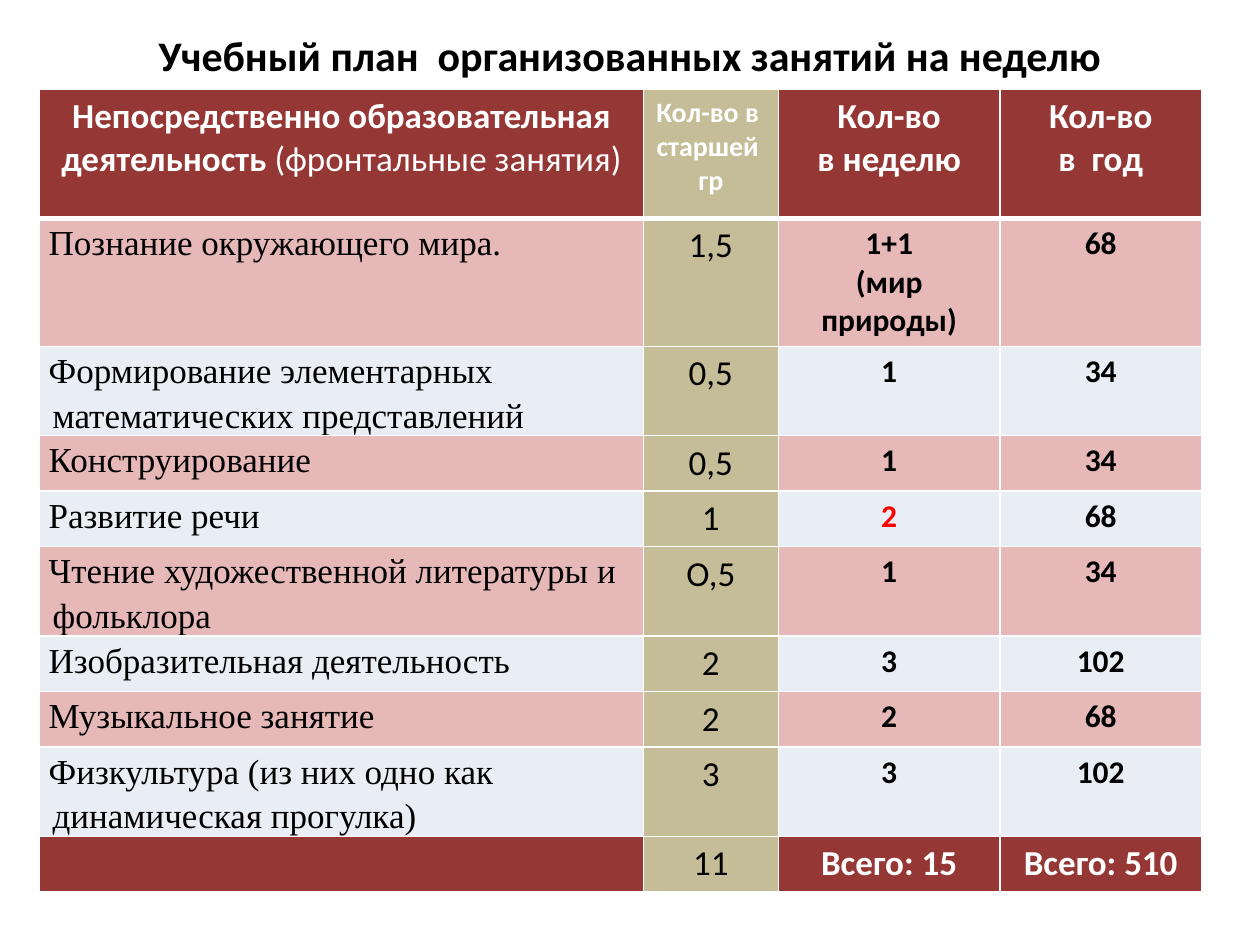
import pptx
import pptx.dml.color
import pptx.enum.text
import pptx.oxml
import pptx.oxml.ns
import pptx.util

Cm = pptx.util.Cm
Pt = pptx.util.Pt
CENTER = pptx.enum.text.PP_ALIGN.CENTER
LEFT = pptx.enum.text.PP_ALIGN.LEFT

TITLE = "Учебный план  организованных занятий на неделю"
HEADER = [
    ["Непосредственно образовательная деятельность |(фронтальные занятия)"],
    ["Кол-во в  старшей ", "гр"],
    ["Кол-во", "в неделю"],
    ["Кол-во", "в  год"],
]
LESSONS = [
    ("Познание окружающего мира.", "1,5", ["1+1", "(мир природы)"], "68"),
    ("Формирование элементарных математических представлений", "0,5", ["1"], "34"),
    ("Конструирование", "0,5", ["1"], "34"),
    ("Развитие речи", "1", ["2"], "68"),
    ("Чтение художественной литературы и фольклора", "О,5", ["1"], "34"),
    ("Изобразительная деятельность", "2", ["3"], "102"),
    ("Музыкальное занятие", "2", ["2"], "68"),
    ("Физкультура (из них одно как динамическая прогулка)", "3", ["3"], "102"),
]
TOTALS = [[], ["11"], ["Всего: 15"], ["Всего: 510"]]

COLUMN_WIDTHS = [12.17, 2.72, 4.47, 4.06]
ROW_HEIGHTS = [2.6, 2.56, 1.8, 1.1, 1.1, 1.8, 1.1, 1.1, 1.8, 1.1]
RED, KHAKI, PINK, PALE = "953735", "C4BD97", "E6B9B8", "E9EDF4"
WHITE, BLACK, ALERT = "FFFFFF", "000000", "FF0000"
ALERT_CELL = (4, 2)

HEADING = {"name": "Calibri", "size": Pt(20), "bold": True}
SMALL_HEADING = {**HEADING, "size": Pt(16)}
LESSON = {"name": "Times New Roman", "size": Pt(20), "bold": False}
GROUP = {**LESSON, "name": "Calibri"}
COUNT = {**HEADING, "size": Pt(18)}
TITLE_FONT = {**HEADING, "size": Pt(24)}


def color(value):
    return pptx.dml.color.RGBColor.from_string(value)


def apply(target, values):
    for name, value in values.items():
        setattr(target, name, value)


def write(frame, lines, font, ink, align=CENTER):
    for index, line in enumerate(lines):
        para = frame.paragraphs[0] if index == 0 else frame.add_paragraph()
        para.alignment = align
        for part, text in enumerate(line.split("|")):
            span = para.add_run()
            span.text = text
            apply(span.font, font)
            span.font.color.rgb = color(ink)
            if part:
                span.font.bold = False


def set_borders(cell, widths):
    properties = cell._tc.get_or_add_tcPr()
    for index, (side, width) in enumerate(widths.items()):
        border = pptx.oxml.parse_xml(
            f'<a:ln{side} {pptx.oxml.ns.nsdecls("a")} w="{Pt(width)}"><a:solidFill>'
            f'<a:srgbClr val="{WHITE}"/></a:solidFill></a:ln{side}>'
        )
        properties.insert(index, border)


def format_lesson(cell):
    apply(cell, {
        "margin_left": Cm(0.18), "margin_right": Cm(0.18),
        "margin_top": 0, "margin_bottom": 0,
    })
    para = cell.text_frame.paragraphs[0]
    para.line_spacing = 1.15
    indents = para._p.get_or_add_pPr()
    indents.set("marL", str(Cm(0.08)))
    indents.set("indent", str(-Cm(0.08)))


def style_for(row, column, last):
    if row == 0:
        return SMALL_HEADING if column == 1 else HEADING
    if column == 1:
        return GROUP
    if row == last:
        return HEADING
    return LESSON if column == 0 else COUNT


def build_table(page):
    rows = [HEADER]
    rows += [[[name], [group], week, [year]] for name, group, week, year in LESSONS]
    rows.append(TOTALS)
    last = len(rows) - 1
    holder = page.shapes.add_table(
        len(rows), len(COLUMN_WIDTHS), Cm(0.8), Cm(1.8),
        Cm(sum(COLUMN_WIDTHS)), Cm(sum(ROW_HEIGHTS)),
    )
    table = holder.table
    apply(table, {"first_row": False, "horz_banding": False})
    for column, width in zip(table.columns, COLUMN_WIDTHS):
        column.width = Cm(width)
    for row, height in zip(table.rows, ROW_HEIGHTS):
        row.height = Cm(height)

    for row, contents in enumerate(rows):
        outer = row in (0, last)
        band = RED if outer else PINK if row % 2 else PALE
        for column, lines in enumerate(contents):
            cell = table.cell(row, column)
            lesson = column == 0 and not outer
            ink = WHITE if row == 0 or (outer and column != 1) else BLACK
            if (row, column) == ALERT_CELL:
                ink = ALERT
            write(cell.text_frame, lines, style_for(row, column, last), ink,
                  LEFT if lesson else CENTER)
            if lesson:
                format_lesson(cell)
            cell.fill.solid()
            cell.fill.fore_color.rgb = color(KHAKI if column == 1 else band)
            set_borders(cell, {"L": 1, "R": 1, "T": 3 if row == 1 else 1,
                               "B": 3 if row == 0 else 1})


def main():
    deck = pptx.Presentation()
    apply(deck, {"slide_width": Cm(25.4), "slide_height": Cm(19.05)})
    page = deck.slides.add_slide(deck.slide_layouts[5])
    title = page.shapes.title
    apply(title, {"left": Cm(1.27), "top": Cm(0.4),
                  "width": Cm(22.86), "height": Cm(1.4)})
    apply(title.text_frame, {
        "word_wrap": True,
        "vertical_anchor": pptx.enum.text.MSO_ANCHOR.MIDDLE,
    })
    write(title.text_frame, [TITLE], TITLE_FONT, BLACK)
    build_table(page)
    deck.save("out.pptx")


if __name__ == "__main__":
    main()
